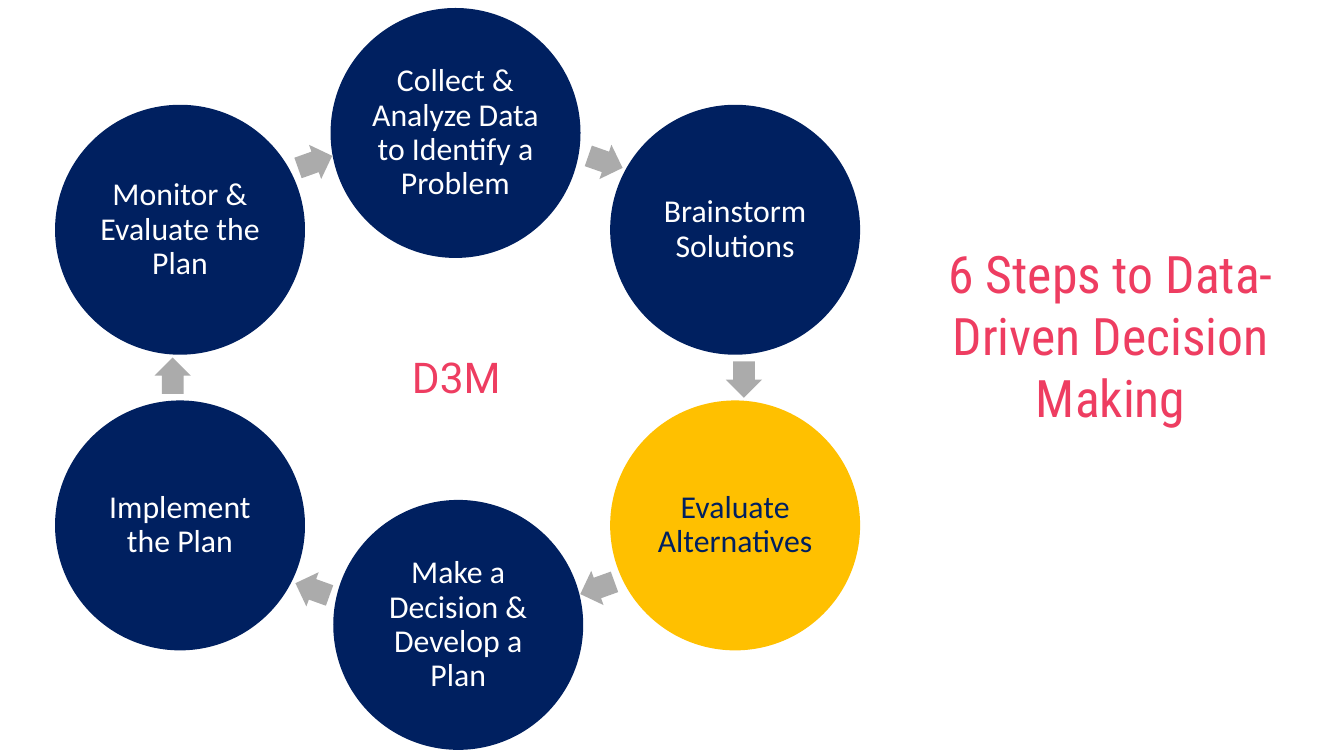
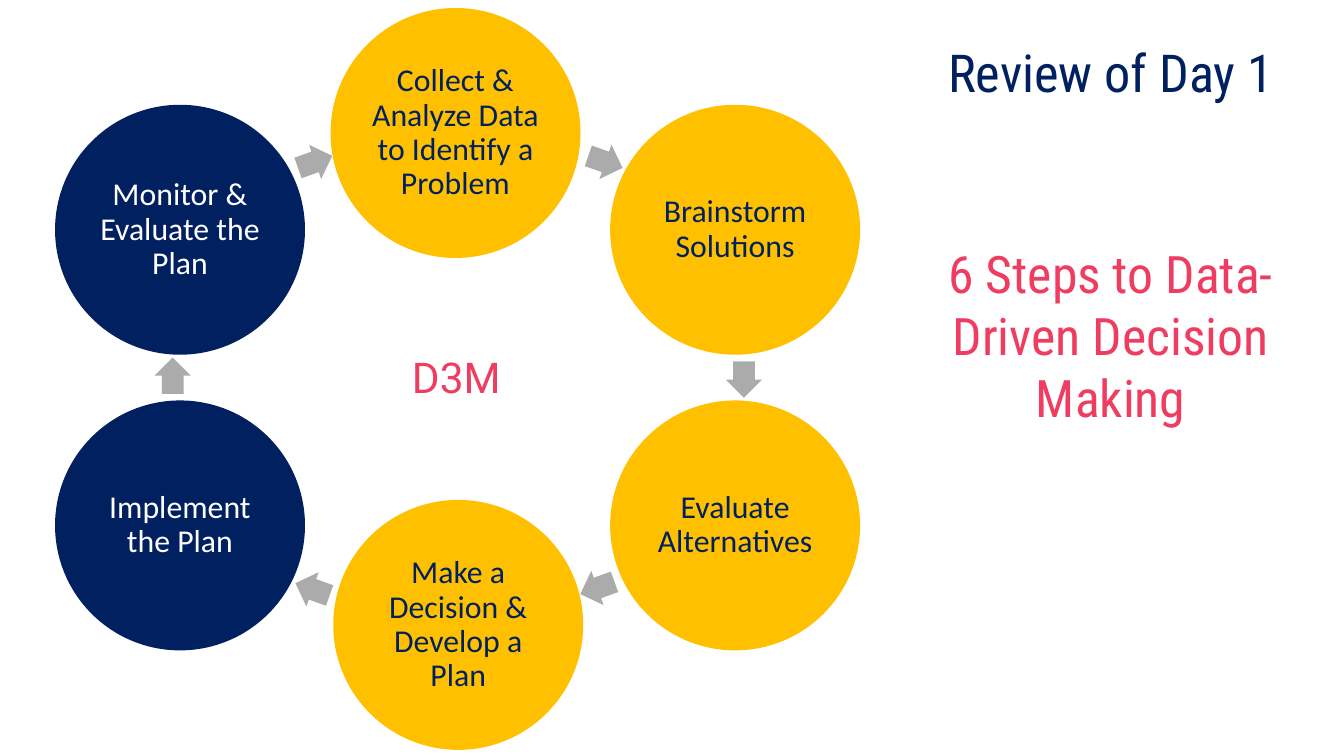
from pptx import Presentation
from pptx.dml.color import RGBColor
from pptx.enum.shapes import MSO_SHAPE
from pptx.enum.text import MSO_ANCHOR, MSO_AUTO_SIZE, PP_ALIGN
from pptx.util import Inches, Pt

NAVY = RGBColor(0x00, 0x20, 0x60)
GOLD = RGBColor(0xFF, 0xC0, 0x00)
PINK = RGBColor(0xEE, 0x3D, 0x61)
GREY = RGBColor(0xAB, 0xAB, 0xAB)
WHITE = RGBColor(0xFF, 0xFF, 0xFF)

CIRCLE, ARROW = MSO_SHAPE.OVAL, MSO_SHAPE.RIGHT_ARROW
TOP, MIDDLE = MSO_ANCHOR.TOP, MSO_ANCHOR.MIDDLE
CENTER = PP_ALIGN.CENTER
NO_FIT = MSO_AUTO_SIZE.NONE
TITLE_ONLY = 5

STEP_FONT = {"name": "Calibri", "size": Pt(17), "bold": False}
TITLE_FONT = {"name": "Roboto Condensed", "size": Pt(27.7), "bold": False}
HEADING_FONT = {**TITLE_FONT, "size": Pt(28)}
CENTER_FONT = {"name": "Roboto", "size": Pt(22.7), "bold": False}

# Regions in inches: corner of the ring, then left, top, width, height
CYCLE_CORNER = (0.41, 0.06)
TITLE_BOX = (6.7, 1.7, 3.13, 1.61)
HEADING_BOX = (6.7, 0.2, 3.13, 0.67)

DIAMETER = 1.86
ARROW_SIZE = 0.27

# Each step: text, offset of its circle, offset and rotation of the next arrow
STEPS = [
    ("Collect & Analyze Data to Identify a Problem", (2.05, 0), (3.96, 1.01), 19.3),
    ("Brainstorm Solutions", (4.13, 0.72), (4.99, 2.63), 90),
    ("Evaluate Alternatives", (4.13, 2.92), (3.9, 4.18), 160.2),
    ("Make a Decision & Develop a Plan", (2.07, 3.66), (1.78, 4.19), 199.7),
    ("Implement the Plan", (0, 2.92), (0.74, 2.6), 270),
    ("Monitor & Evaluate the Plan", (0, 0.72), (1.8, 1.01), 340.4),
]


def write_text(shape, text, font, color, anchor, inset=0.1, line_spacing=1.0):
    frame = shape.text_frame
    settings = {"word_wrap": True, "auto_size": NO_FIT, "vertical_anchor": anchor}
    for side in ("left", "top", "right", "bottom"):
        settings["margin_" + side] = Inches(inset)
    for name, value in settings.items():
        setattr(frame, name, value)
    para = frame.paragraphs[0]
    para.alignment = CENTER
    para.line_spacing = line_spacing
    span = para.add_run()
    span.text = text
    for name, value in font.items():
        setattr(span.font, name, value)
    span.font.color.rgb = color


def add_textbox(page, box, text, font, color, anchor):
    textbox = page.shapes.add_textbox(*map(Inches, box))
    write_text(textbox, text, font, color, anchor)


def add_flat_shape(page, kind, left, top, size, fill):
    shape = page.shapes.add_shape(
        kind, Inches(left), Inches(top), Inches(size), Inches(size))
    shape.shadow.inherit = False
    shape.fill.solid()
    shape.fill.fore_color.rgb = fill
    shape.line.fill.background()
    return shape


def add_cycle(page, corner, highlighted):
    """Ring of six steps with arrows; highlighted holds the gold step indices."""
    left, top = corner
    for index, (text, (x, y), (arrow_x, arrow_y), angle) in enumerate(STEPS):
        fill, ink = (GOLD, NAVY) if index in highlighted else (NAVY, WHITE)
        circle = add_flat_shape(page, CIRCLE, left + x, top + y, DIAMETER, fill)
        write_text(circle, text, STEP_FONT, ink, MIDDLE, 0.02, 0.9)

        arrow = add_flat_shape(
            page, ARROW, left + arrow_x, top + arrow_y, ARROW_SIZE, GREY)
        arrow.rotation = angle
        arrow.adjustments[0] = 0.6
        arrow.adjustments[1] = 0.5

    # Label in the middle of the ring
    label_box = (left + 1.47, top + 2.45, 3.03, 0.58)
    add_textbox(page, label_box, "D3M", CENTER_FONT, PINK, MIDDLE)


def add_title(page, box):
    title = page.shapes.title
    title.left, title.top, title.width, title.height = map(Inches, box)
    write_text(title, "6 Steps to Data-Driven Decision Making",
               TITLE_FONT, PINK, TOP)


def add_cycle_page(deck, highlighted, heading=None):
    page = deck.slides.add_slide(deck.slide_layouts[TITLE_ONLY])
    add_cycle(page, CYCLE_CORNER, highlighted)
    add_title(page, TITLE_BOX)
    if heading:
        add_textbox(page, HEADING_BOX, heading, HEADING_FONT, NAVY, TOP)


def main():
    deck = Presentation()
    # Widescreen, 16 to 9
    deck.slide_width = Inches(10)
    deck.slide_height = deck.slide_width * 9 // 16
    add_cycle_page(deck, highlighted={2})
    add_cycle_page(deck, highlighted={0, 1, 2, 3}, heading="Review of Day 1")
    deck.save("out.pptx")


if __name__ == "__main__":
    main()
